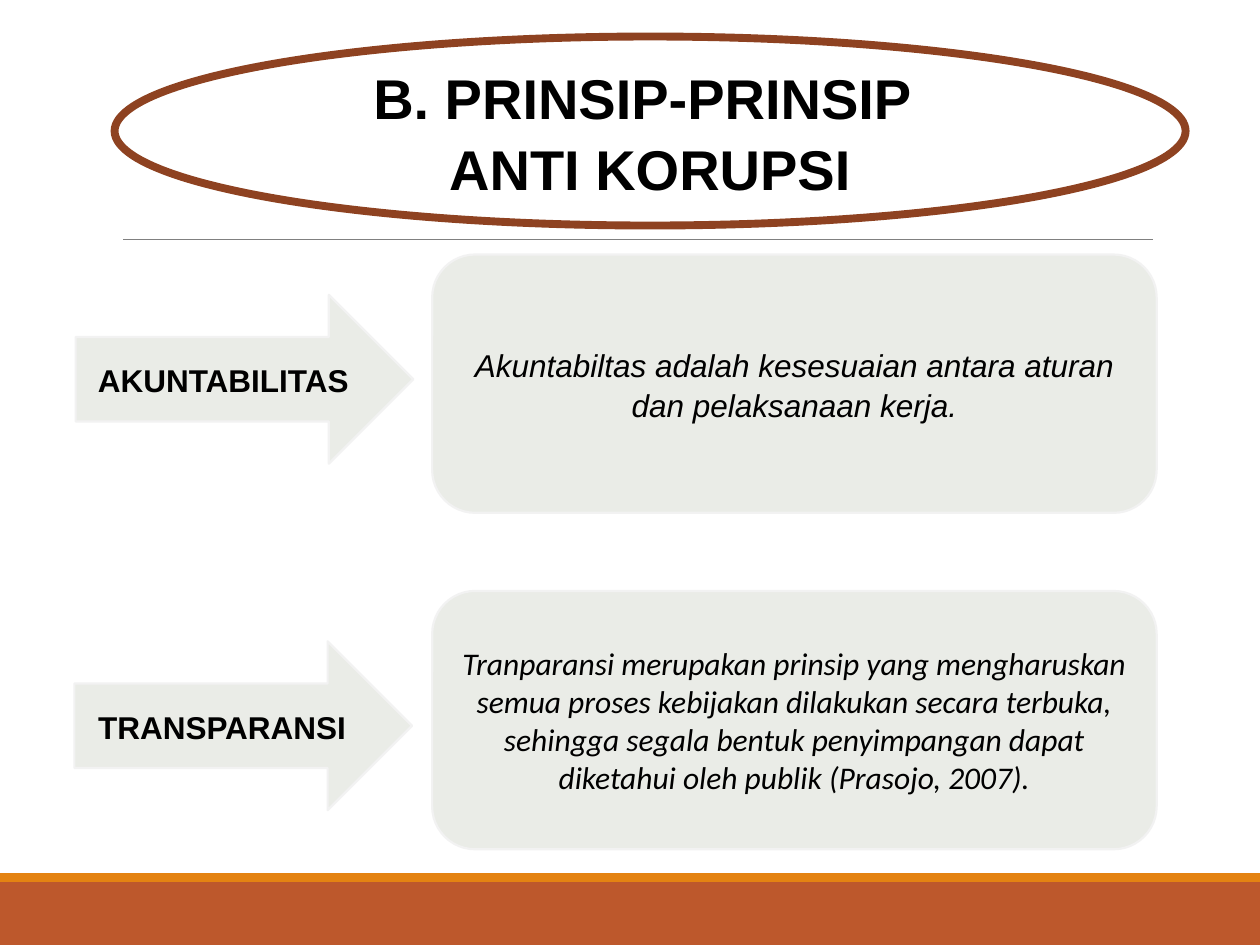
import pptx
import pptx.dml.color
import pptx.enum.shapes
import pptx.enum.text
import pptx.oxml.xmlchemy
import pptx.util
from pptx.util import Inches

SHAPE = pptx.enum.shapes.MSO_SHAPE


def rgb(value):
    return pptx.dml.color.RGBColor.from_string(value)


class SlideBuilder:
    """Holds the slide and its style, and adds each kind of element."""

    band, stripe, rule = "BD582C", "E48312", "808080"
    panel, edge, ring = "EAECE7", "F2F2F2", "8E4221"
    ink, paper = "000000", "FFFFFF"

    def __init__(self, slide):
        self.s = slide

    def shape(self, kind, box, fill, line=None, width=1.25):
        sp = self.s.shapes.add_shape(kind, *map(Inches, box))
        sp.shadow.inherit = False
        sp.fill.solid()
        sp.fill.fore_color.rgb = rgb(fill)
        if line:
            sp.line.color.rgb = rgb(line)
            sp.line.width = pptx.util.Pt(width)
        else:
            sp.line.fill.background()
        return sp

    def label(self, sp, text, size=18, font="Arial", bold=False, italic=False, spacing=1.05):
        tf = sp.text_frame
        tf.word_wrap = True
        tf.vertical_anchor = pptx.enum.text.MSO_ANCHOR.MIDDLE
        tf.text = text
        for p in tf.paragraphs:
            p.alignment = pptx.enum.text.PP_ALIGN.CENTER
            p.line_spacing = spacing
            for r in p.runs:
                r.font.size = pptx.util.Pt(size)
                r.font.name = font
                r.font.bold = bold
                r.font.italic = italic
                r.font.color.rgb = rgb(self.ink)

    def footer(self):
        self.shape(SHAPE.RECTANGLE, (0, 7, 10, 0.5), self.band)
        self.shape(SHAPE.RECTANGLE, (0, 6.93, 10, 0.07), self.stripe)

    def divider(self, left, right, y):
        line = self.s.shapes.add_connector(
            pptx.enum.shapes.MSO_CONNECTOR.STRAIGHT,
            Inches(left), Inches(y), Inches(right), Inches(y))
        line.line.color.rgb = rgb(self.rule)
        line.line.width = pptx.util.Pt(0.5)
        line._element.spPr.append(pptx.oxml.xmlchemy.OxmlElement("a:effectLst"))

    def title(self, text):
        sp = self.shape(SHAPE.OVAL, (0.91, 0.29, 8.5, 1.5), self.paper, self.ring, 4.5)
        self.label(sp, text, size=32, bold=True)

    def principle(self, name, meaning, arrow_left, arrow_top, box_top, font, spacing):
        arrow = self.shape(SHAPE.RIGHT_ARROW, (arrow_left, arrow_top, 2.68, 1.34),
                           self.panel, self.edge)
        self.label(arrow, name, bold=True)
        box = self.shape(SHAPE.ROUNDED_RECTANGLE, (3.43, box_top, 5.75, 2.05),
                         self.panel, self.edge)
        self.label(box, meaning, font=font, italic=True, spacing=spacing)


def main():
    prs = pptx.Presentation()
    prs.slide_width, prs.slide_height = Inches(10), Inches(7.5)
    b = SlideBuilder(prs.slides.add_slide(prs.slide_layouts[6]))
    b.footer()
    b.divider(0.98, 9.15, 1.9)
    b.title("B. PRINSIP-PRINSIP \nANTI KORUPSI")
    b.principle(
        "AKUNTABILITAS",
        "Akuntabiltas adalah kesesuaian antara aturan dan pelaksanaan kerja.",
        0.6, 2.34, 2.02, "Arial", 1.05)
    b.principle(
        "TRANSPARANSI",
        "Tranparansi merupakan prinsip yang mengharuskan semua proses kebijakan "
        "dilakukan secara terbuka, sehingga segala bentuk penyimpangan dapat "
        "diketahui oleh publik (Prasojo, 2007).",
        0.59, 5.09, 4.69, "Calibri", 1.0)
    prs.save("out.pptx")


if __name__ == "__main__":
    main()
